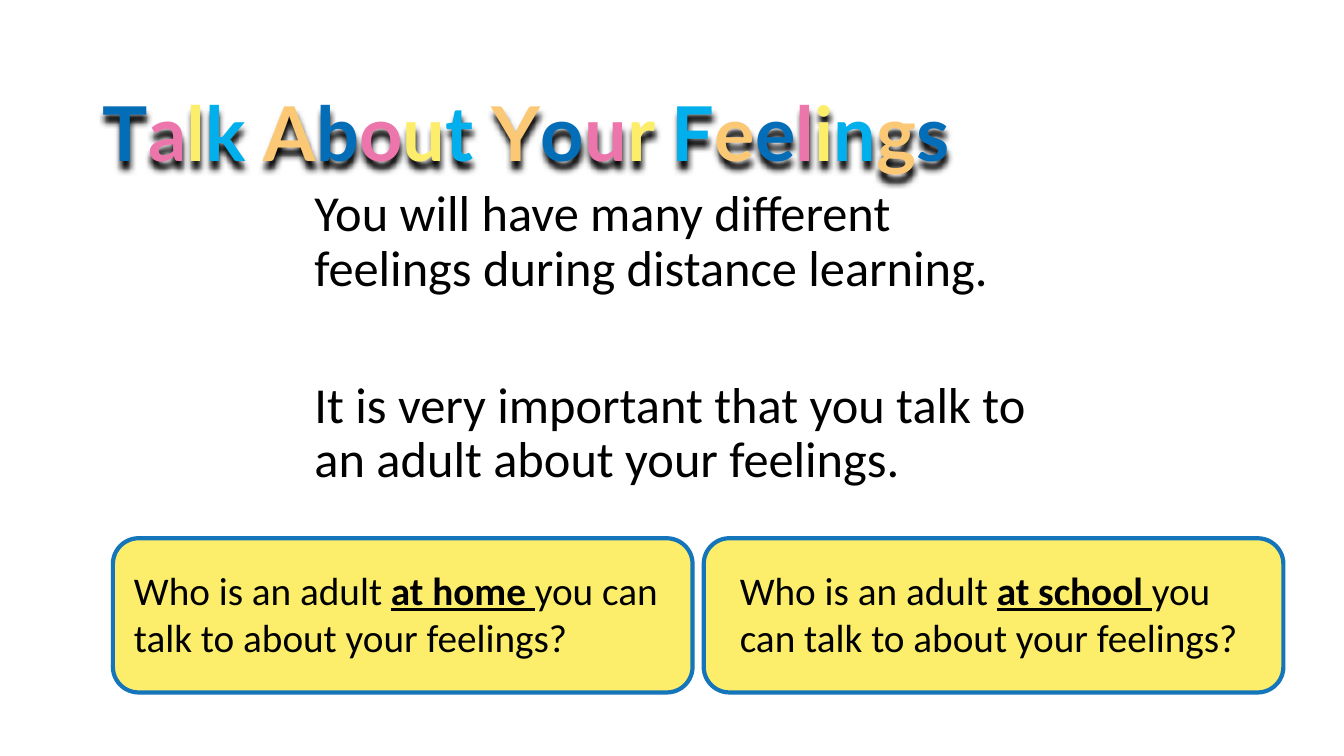
from itertools import cycle

from lxml import etree
from pptx import Presentation
from pptx.dml.color import RGBColor
from pptx.enum.shapes import MSO_SHAPE
from pptx.enum.text import MSO_ANCHOR
from pptx.oxml import parse_xml
from pptx.oxml.ns import nsdecls
from pptx.util import Inches, Pt

ROUNDED = MSO_SHAPE.ROUNDED_RECTANGLE
TOP, MIDDLE = MSO_ANCHOR.TOP, MSO_ANCHOR.MIDDLE

BLACK = RGBColor(0x00, 0x00, 0x00)
BLUE = RGBColor(0x04, 0x6D, 0xB7)
PINK = RGBColor(0xEC, 0x76, 0xAB)
YELLOW = RGBColor(0xFC, 0xEE, 0x6B)
CYAN = RGBColor(0x01, 0xAF, 0xEC)
ORANGE = RGBColor(0xFB, 0xC8, 0x75)
BORDER = RGBColor(0x14, 0x75, 0xBA)
RAINBOW = (BLUE, PINK, YELLOW, CYAN, ORANGE)

TITLE = "Talk About Your Feelings"
MESSAGES = (
    "You will have many different feelings during distance learning.",
    "It is very important that you talk to an adult about your feelings.",
)
MESSAGE_GAP = 59
CARD_LEFT, CARD_TOP, CARD_WIDTH, CARD_HEIGHT = 8.4, 71.2, 43.13, 20.4
CARD_STEP = 43.96
QUESTION_TOP = 74.27
# place, left and width of each question
QUESTIONS = (("at home ", 9.23, 42.3), ("at school ", 54.31, 38.78))


def add_span(para, text, font="Calibri", size=28, color=BLACK, bold=False, underline=False):
    span = para.add_run()
    span.text = text
    span.font.name = font
    span.font.size = Pt(size)
    span.font.color.rgb = color
    span.font.bold = bold
    span.font.underline = underline


class SlideBuilder:
    """Draws on one slide; all lengths are percentages of its width and height."""

    def __init__(self, deck):
        self.deck = deck
        self.slide = deck.slides.add_slide(deck.slide_layouts[6])

    def area(self, left, top, width, height):
        across, down = self.deck.slide_width / 100, self.deck.slide_height / 100
        return [int(length) for length in (left * across, top * down, width * across, height * down)]

    def card(self, *place):
        card = self.slide.shapes.add_shape(ROUNDED, *self.area(*place))
        card.shadow.inherit = False
        card.fill.solid()
        card.fill.fore_color.rgb = YELLOW
        card.line.color.rgb = BORDER
        card.line.width = Pt(3)

    def text_box(self, *place, anchor=TOP):
        box = self.slide.shapes.add_textbox(*self.area(*place))
        box.text_frame.word_wrap = True
        box.text_frame.vertical_anchor = anchor
        return box

    def title(self, text, *place):
        """Colour the letters in turn, each space staying with the letter before it."""
        box = self.text_box(*place, anchor=MIDDLE)
        para = box.text_frame.paragraphs[0]
        para.line_spacing = 0.9
        colors = cycle(RAINBOW)
        for word in text.replace(" ", " \n").split("\n"):
            letters = word.rstrip()
            for letter in letters[:-1] + " ".join(letters[-1:]):
                add_span(para, letter, font="Lato", size=54, color=next(colors), bold=True)
            para.runs[-1].text += word[len(letters):]
        self.drop_shadow(box)

    def drop_shadow(self, box):
        effects = parse_xml(f"<a:effectLst {nsdecls('a')}/>")
        shadow = etree.SubElement(
            effects, effects.tag.replace("effectLst", "outerShdw"),
            blurRad=str(Pt(4)), dist=str(Pt(5)), dir="5400000", algn="t", rotWithShape="0")
        etree.SubElement(shadow, effects.tag.replace("effectLst", "srgbClr"), val=str(BLACK))
        box._element.spPr.append(effects)

    def messages(self, texts, *place):
        frame = self.text_box(*place).text_frame
        for index, text in enumerate(texts):
            para = frame.add_paragraph() if index else frame.paragraphs[0]
            para.line_spacing = 0.9
            if index:
                para.space_before = Pt(MESSAGE_GAP)
            add_span(para, text, size=36)

    def question(self, where, *place):
        para = self.text_box(*place).text_frame.paragraphs[0]
        add_span(para, "Who is an adult ")
        add_span(para, where, bold=True, underline=True)
        add_span(para, "you can talk to about your feelings?")


def main():
    deck = Presentation()
    deck.slide_width, deck.slide_height = Inches(13.33), Inches(7.5)
    builder = SlideBuilder(deck)
    for index in range(len(QUESTIONS)):
        builder.card(CARD_LEFT + index * CARD_STEP, CARD_TOP, CARD_WIDTH, CARD_HEIGHT)
    builder.title(TITLE, 6.9, 8.4, 86.27, 19.33)
    builder.messages(MESSAGES, 22.66, 24.27, 54.76, 46.53)
    for where, left, width in QUESTIONS:
        builder.question(where, left, QUESTION_TOP, width, 13.87)
    deck.save("out.pptx")


if __name__ == "__main__":
    main()
